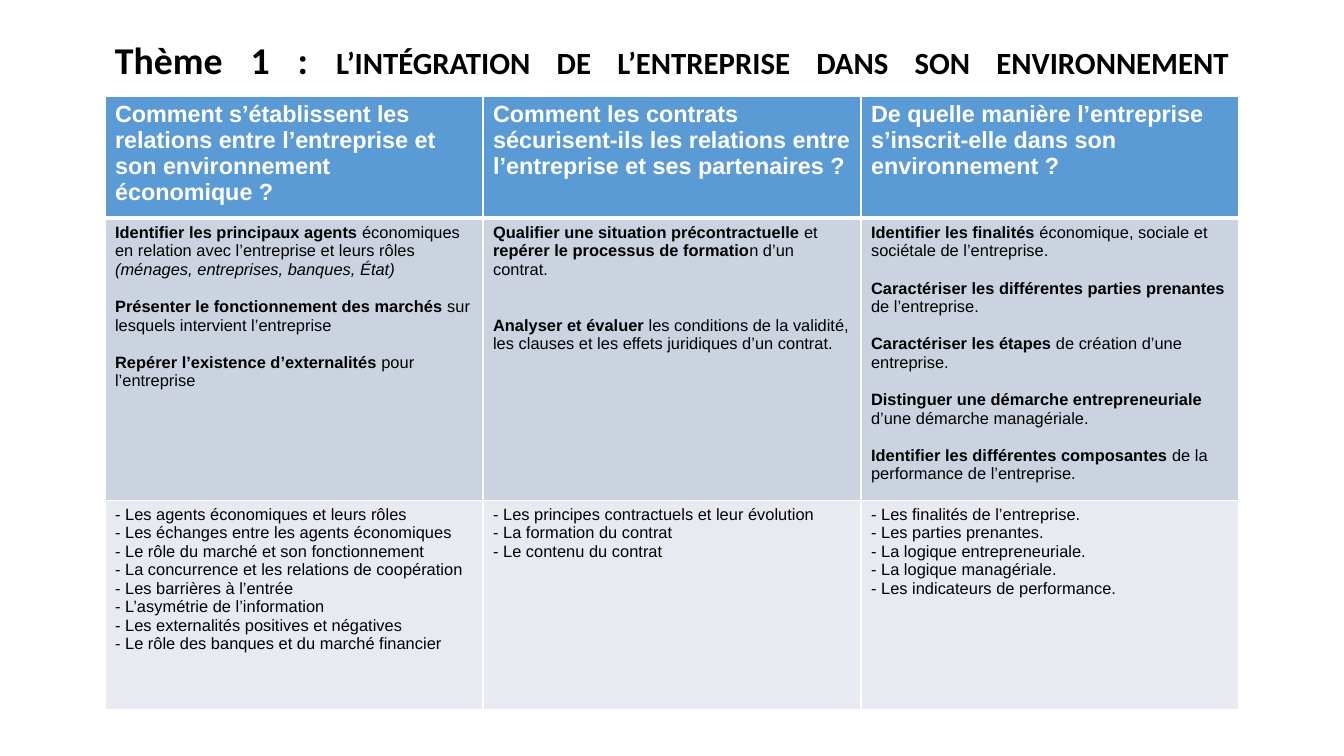
from lxml import etree
from pptx import Presentation
from pptx.dml.color import RGBColor
from pptx.enum import text
from pptx.oxml import ns
from pptx.util import Pt

BLACK = RGBColor(0x00, 0x00, 0x00)
WHITE = RGBColor(0xFF, 0xFF, 0xFF)
BLUE = RGBColor(0x5B, 0x9B, 0xD5)
MID = RGBColor(0xCB, 0xD3, 0xE1)
PALE = RGBColor(0xE7, 0xEA, 0xF1)

TITLE = [("Thème 1 : ", 27), ("L’INTÉGRATION DE L’ENTREPRISE DANS SON ENVIRONNEMENT", 22)]
QUESTIONS = [
    "Comment s’établissent les relations entre l’entreprise et son environnement économique\u00a0?",
    "Comment les contrats sécurisent-ils les relations entre l’entreprise et ses partenaires\u00a0?",
    "De quelle manière l’entreprise s’inscrit-elle dans son environnement\u00a0?",
]
SKILLS = [
    [
        [("Identifier les principaux agents ", "b"),
         ("économiques en relation avec l’entreprise et leurs rôles ", ""),
         ("(ménages, entreprises, banques, État)", "i")],
        [("Présenter le fonctionnement des marchés ", "b"),
         ("sur lesquels intervient l’entreprise", "")],
        [("Repérer l’existence d’externalités ", "b"), ("pour l’entreprise", "")],
    ],
    [
        [("Qualifier une situation précontractuelle ", "b"), ("et ", ""),
         ("repérer le processus de formatio", "b"), ("n d’un contrat.", "")],
        [("Analyser et évaluer", "b"),
         (" les conditions de la validité, les clauses et les effets juridiques d’un contrat.", "")],
    ],
    [
        [("Identifier les finalités ", "b"), ("économique, sociale et sociétale de l’entreprise.", "")],
        [("Caractériser les différentes parties prenantes", "b"), (" de l’entreprise.", "")],
        [("Caractériser les étapes", "b"), (" de création d’une entreprise.", "")],
        [("Distinguer une démarche entrepreneuriale ", "b"), ("d’une démarche managériale.", "")],
        [("Identifier les différentes composantes ", "b"), ("de la performance de l’entreprise.", "")],
    ],
]
NOTIONS = [
    ["Les agents économiques et leurs rôles", "Les échanges entre les agents économiques",
     "Le rôle du marché et son fonctionnement", "La concurrence et les relations de coopération",
     "Les barrières à l’entrée", "L’asymétrie de l’information",
     "Les externalités positives et négatives", "Le rôle des banques et du marché financier"],
    ["Les principes contractuels et leur évolution", "La formation du contrat",
     "Le contenu du contrat"],
    ["Les finalités de l’entreprise.", "Les parties prenantes.", "La logique entrepreneuriale.",
     "La logique managériale.", "Les indicateurs de performance."],
]
LEFT, WIDTH, TABLE_TOP = 75, 810, 68.5
HEIGHTS = [83.5, 196, 149.5]
LINE = 13.4
SKILL_GAPS = [LINE, 2 * LINE, LINE]
ROWS = [
    ([[[(q, "b")]] for q in QUESTIONS], 16.7, WHITE, BLUE, [0, 0, 0], (1, 3)),
    (SKILLS, 11.7, BLACK, MID, SKILL_GAPS, (3, 1)),
    ([[[("- " + n, "")] for n in ns_] for ns_ in NOTIONS], 11.7, BLACK, PALE, [0, 0, 0], (1, 1)),
]


def add_run(p, words, font, size, color, style):
    r = p.add_run()
    r.text = words
    r.font.name = font
    r.font.size = Pt(size)
    r.font.color.rgb = color
    r.font.bold = style == "b"
    r.font.italic = style == "i"


def add_borders(cell, top, bottom):
    tcPr = cell._tc.get_or_add_tcPr()
    for side, width in (("L", 1), ("R", 1), ("T", top), ("B", bottom)):
        ln = etree.SubElement(tcPr, ns.qn("a:ln" + side), w=str(Pt(width)))
        fill = etree.SubElement(ln, ns.qn("a:solidFill"))
        etree.SubElement(fill, ns.qn("a:srgbClr"), val=str(WHITE))


def add_title(s):
    tf = s.shapes.add_textbox(Pt(LEFT), Pt(21.6), Pt(WIDTH), Pt(95)).text_frame
    tf.word_wrap = True
    tf.vertical_anchor = text.MSO_ANCHOR.TOP
    tf.margin_top = Pt(8.5)
    p = tf.paragraphs[0]
    p.alignment = text.PP_ALIGN.JUSTIFY
    p.line_spacing = 0.9
    for words, size in TITLE:
        add_run(p, words, "Calibri", size, BLACK, "b")
    p.add_line_break()


def add_theme_table(s):
    table = s.shapes.add_table(len(ROWS), len(QUESTIONS), Pt(LEFT), Pt(TABLE_TOP),
                               Pt(WIDTH), Pt(sum(HEIGHTS))).table
    for i, (cells, size, color, fill, gaps, edges) in enumerate(ROWS):
        table.rows[i].height = Pt(HEIGHTS[i])
        for j, paragraphs in enumerate(cells):
            cell = table.cell(i, j)
            add_borders(cell, *edges)
            cell.fill.solid()
            cell.fill.fore_color.rgb = fill
            tf = cell.text_frame
            for k, runs in enumerate(paragraphs):
                p = tf.add_paragraph() if k else tf.paragraphs[0]
                p.space_before = Pt(gaps[j] if k else 0)
                for words, style in runs:
                    add_run(p, words, "Arial", size, color, style)


def main():
    prs = Presentation()
    prs.slide_width, prs.slide_height = Pt(960), Pt(540)
    s = prs.slides.add_slide(prs.slide_layouts[6])
    add_title(s)
    add_theme_table(s)
    prs.save("out.pptx")


if __name__ == "__main__":
    main()
